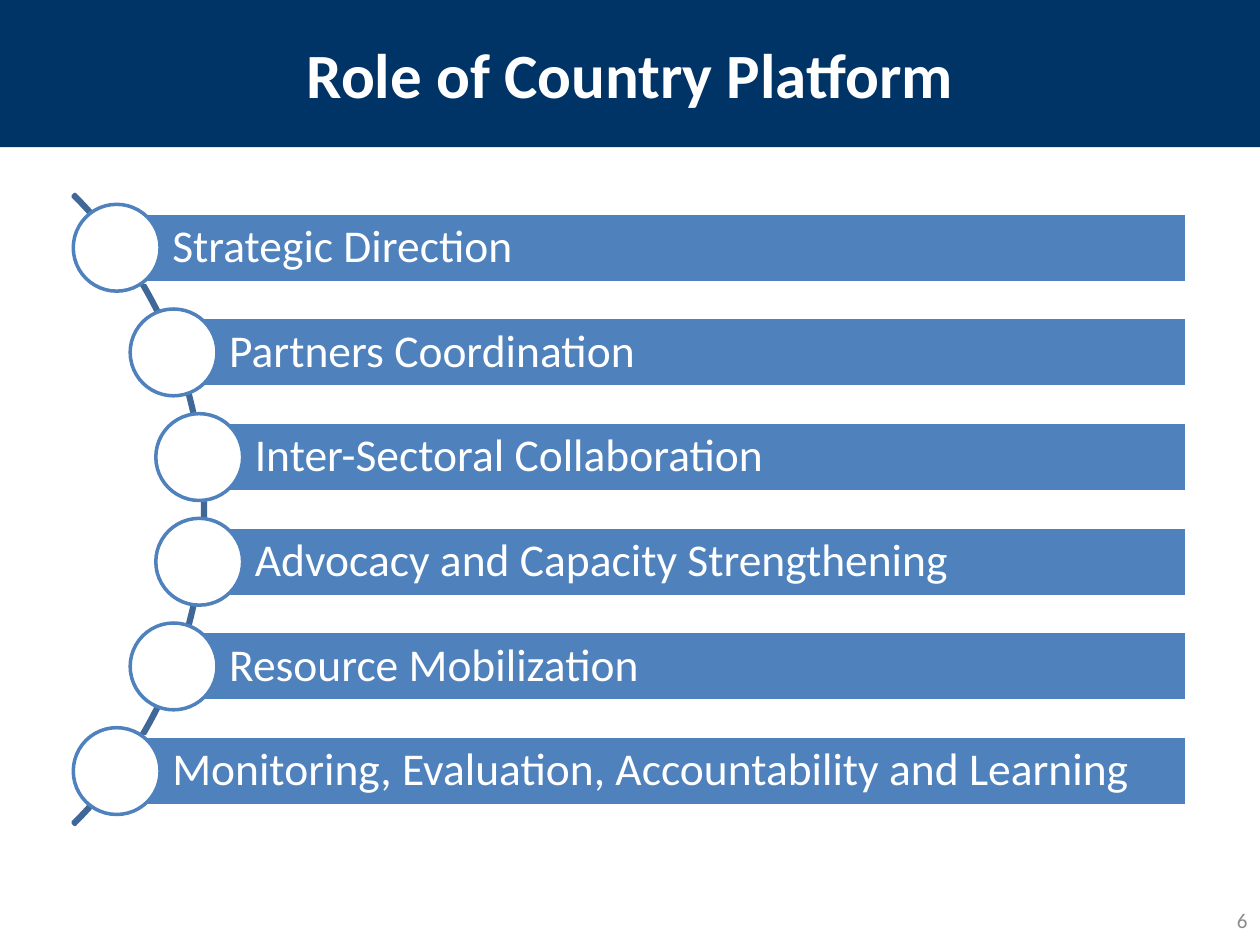
from collections import namedtuple
from math import sqrt

from pptx import Presentation
from pptx import util as u
from pptx.dml.color import RGBColor
from pptx.enum import shapes, text

NAVY = RGBColor(0x00, 0x33, 0x66)
BLUE = RGBColor(0x4F, 0x81, 0xBD)
ARC_BLUE = RGBColor(0x3F, 0x67, 0x97)
GREY = RGBColor(0x8C, 0x8C, 0x8C)
WHITE = RGBColor(0xFF, 0xFF, 0xFF)
FONT = "Calibri"

ROLES = [
    "Strategic Direction",
    "Partners Coordination",
    "Inter-Sectoral Collaboration",
    "Advocacy and Capacity Strengthening",
    "Resource Mobilization",
    "Monitoring, Evaluation, Accountability and Learning",
]

Box = namedtuple("Box", "left top width height")


def add_box(parent, kind, box, fill=None, line=None):
    shape = parent.add_shape(kind, *(u.Cm(length) for length in box))
    shape.shadow.inherit = False
    if fill is None:
        shape.fill.background()
    else:
        shape.fill.solid()
        shape.fill.fore_color.rgb = fill
    if line is None:
        shape.line.fill.background()
    else:
        shape.line.color.rgb = line
        shape.line.width = u.Pt(2)
    return shape


def write(shape, words, size, color, align, bold=False):
    frame = shape.text_frame
    frame.word_wrap = True
    frame.auto_size = text.MSO_AUTO_SIZE.NONE
    frame.vertical_anchor = text.MSO_ANCHOR.MIDDLE
    paragraph = frame.paragraphs[0]
    paragraph.alignment = align
    run = paragraph.add_run()
    run.text = words
    run.font.name = FONT
    run.font.size = u.Pt(size)
    run.font.bold = bold
    run.font.color.rgb = color
    return paragraph


def add_header(slide, box):
    title = slide.shapes.title
    band = add_box(slide.shapes, shapes.MSO_SHAPE.RECTANGLE, box, NAVY)
    title.element.addprevious(band.element)
    margin = 0.13
    title.left, title.top = u.Cm(box.left), u.Cm(box.top + margin)
    title.width, title.height = u.Cm(box.width), u.Cm(box.height - 2 * margin)
    write(title, "Role of Country Platform", 36, WHITE, text.PP_ALIGN.CENTER, bold=True)


def add_role_bar(group, box, role):
    bar = add_box(group, shapes.MSO_SHAPE.RECTANGLE, box, BLUE, WHITE)
    frame = bar.text_frame
    frame.margin_left = u.Cm(1.12)
    frame.margin_top = frame.margin_right = frame.margin_bottom = u.Cm(0.18)
    paragraph = write(bar, role, 26, WHITE, text.PP_ALIGN.LEFT)
    paragraph.line_spacing = 0.9


def add_curved_list(slide, box, roles):
    group = slide.shapes.add_group_shape().shapes
    arc_size, radius = 17.96, 8.92
    pitch, bar_height, circle_size = 2.11, 1.4, 1.75
    center_x = box.left - 6.31
    center_y = box.top + box.height / 2

    arc_box = Box(center_x - arc_size / 2, center_y - arc_size / 2, arc_size, arc_size)
    arc = add_box(group, shapes.MSO_SHAPE.BLOCK_ARC, arc_box, line=ARC_BLUE)
    for index, value in enumerate((189, 27, 0.003)):
        arc.adjustments[index] = value

    for index, role in enumerate(roles):
        offset = (index - (len(roles) - 1) / 2) * pitch
        x = center_x + sqrt(radius ** 2 - offset ** 2)
        y = center_y + offset
        bar_box = Box(x, y - bar_height / 2, box.left + box.width - x, bar_height)
        add_role_bar(group, bar_box, role)
        circle_box = Box(x - circle_size / 2, y - circle_size / 2, circle_size, circle_size)
        add_box(group, shapes.MSO_SHAPE.OVAL, circle_box, WHITE, BLUE)


def add_page_number(slide, box, number):
    label = slide.shapes.add_textbox(*(u.Cm(length) for length in box))
    write(label, number, 12, GREY, text.PP_ALIGN.RIGHT)


def main():
    presentation = Presentation()
    presentation.slide_width, presentation.slide_height = u.Cm(25.4), u.Cm(19.05)
    slide = presentation.slides.add_slide(presentation.slide_layouts[5])
    add_header(slide, Box(0, 0, 25.4, 2.97))
    add_page_number(slide, Box(19.48, 18.03, 5.92, 1.02), "6")
    add_curved_list(slide, Box(1.47, 3.87, 22.45, 12.8), ROLES)
    presentation.save("out.pptx")


if __name__ == "__main__":
    main()
